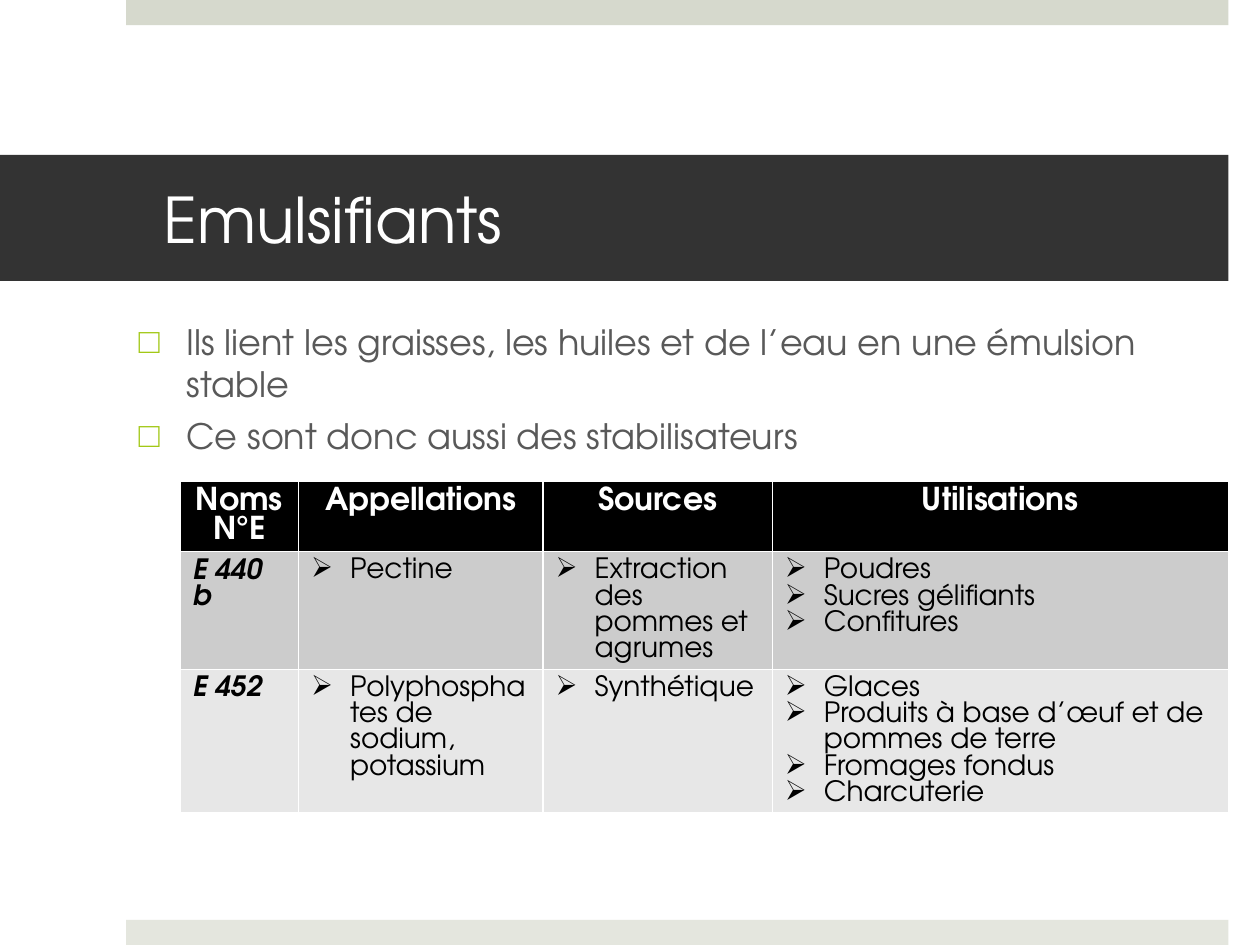
import pptx
import pptx.util
import pptx.dml.color
import pptx.enum.shapes
import pptx.enum.text
import pptx.oxml.ns
import lxml.etree

Inches = pptx.util.Inches
Pt = pptx.util.Pt
RGBColor = pptx.dml.color.RGBColor
PP_ALIGN = pptx.enum.text.PP_ALIGN
MSO_ANCHOR = pptx.enum.text.MSO_ANCHOR

FONT = "TeX Gyre Adventor"
WHITE = RGBColor(0xFF, 0xFF, 0xFF)
BLACK = RGBColor(0x00, 0x00, 0x00)
DARK = RGBColor(0x33, 0x33, 0x33)
GREY = RGBColor(0x59, 0x59, 0x59)
GREEN = RGBColor(0xA2, 0xC8, 0x16)
TOP_BAR = RGBColor(0xD6, 0xD9, 0xCD)
BOTTOM_BAR = RGBColor(0xE4, 0xE6, 0xDE)
ROW_FILLS = [BLACK, RGBColor(0xCC, 0xCC, 0xCC), RGBColor(0xE7, 0xE7, 0xE7)]


def style(p, size, color, spacing, bold=False, italic=False, align=PP_ALIGN.LEFT):
    p.alignment = align
    p.line_spacing = spacing
    p.space_before = Pt(0)
    for r in p.runs:
        r.font.name = FONT
        r.font.size = Pt(size)
        r.font.color.rgb = color
        r.font.bold = bold
        r.font.italic = italic


def add_bullet(p, char, indent, color):
    qn = pptx.oxml.ns.qn
    pPr = p._p.get_or_add_pPr()
    pPr.set("marL", str(Inches(indent)))
    pPr.set("indent", str(-Inches(indent)))
    clr = lxml.etree.SubElement(pPr, qn("a:buClr"))
    lxml.etree.SubElement(clr, qn("a:srgbClr")).set("val", str(color))
    lxml.etree.SubElement(pPr, qn("a:buChar")).set("char", char)


prs = pptx.Presentation()
prs.slide_width = Inches(10)
prs.slide_height = Inches(7.5)
s = prs.slides.add_slide(prs.slide_layouts[1])

for top, color in [(0, TOP_BAR), (7.3, BOTTOM_BAR)]:
    sp = s.shapes.add_shape(pptx.enum.shapes.MSO_SHAPE.RECTANGLE,
                            Inches(1), Inches(top), Inches(8.75), Inches(0.2))
    sp.shadow.inherit = False
    sp.fill.solid()
    sp.fill.fore_color.rgb = color
    sp.line.fill.background()

title = s.shapes.title
title.left, title.top = Inches(0), Inches(1.23)
title.width, title.height = Inches(9.75), Inches(1)
title.fill.solid()
title.fill.fore_color.rgb = DARK
tf = title.text_frame
tf.text = "Emulsifiants"
tf.word_wrap = True
tf.auto_size = pptx.enum.text.MSO_AUTO_SIZE.NONE
tf.vertical_anchor = MSO_ANCHOR.MIDDLE
tf.margin_left, tf.margin_right = Inches(1.3), Inches(0.3)
style(tf.paragraphs[0], 36, WHITE, 1.0)

body = s.placeholders[1]
body.left, body.top = Inches(1), Inches(2.49)
body.width, body.height = Inches(8.75), Inches(1.81)
tf = body.text_frame
tf.text = ("Ils lient les graisses, les huiles et de l’eau en une émulsion stable\n"
           "Ce sont donc aussi des stabilisateurs")
tf.word_wrap = True
tf.auto_size = pptx.enum.text.MSO_AUTO_SIZE.NONE
tf.vertical_anchor = MSO_ANCHOR.TOP
for p in tf.paragraphs:
    style(p, 20, GREY, Pt(24))
    p.space_before = Pt(6)
    add_bullet(p, "□", 0.38, GREEN)

rows = [
    ["Noms N°E", "Appellations", "Sources", "Utilisations"],
    ["E 440 b", "Pectine", "Extraction des pommes et agrumes",
     "Poudres\nSucres gélifiants\nConfitures"],
    ["E 452", "Polyphosphates de sodium, potassium", "Synthétique",
     "Glaces\nProduits à base d’œuf et de pommes de terre\n"
     "Fromages fondus\nCharcuterie"],
]
col_widths = [0.94, 1.94, 1.82, 3.62]
row_heights = [0.55, 0.93, 1.13]

table = s.shapes.add_table(len(rows), len(col_widths), Inches(1.43), Inches(3.82),
                           Inches(sum(col_widths)), Inches(sum(row_heights))).table
for col, width in zip(table.columns, col_widths):
    col.width = Inches(width)
for row, height in zip(table.rows, row_heights):
    row.height = Inches(height)

for i, texts in enumerate(rows):
    for j, text in enumerate(texts):
        cell = table.cell(i, j)
        cell.fill.solid()
        cell.fill.fore_color.rgb = ROW_FILLS[i]
        cell.text_frame.text = text
        for p in cell.text_frame.paragraphs:
            if i == 0:
                style(p, 18, WHITE, Pt(16.5), bold=True, align=PP_ALIGN.CENTER)
            elif j == 0:
                style(p, 16, BLACK, Pt(15), bold=True, italic=True)
            else:
                style(p, 16, BLACK, Pt(15))
                add_bullet(p, "➢", 0.31, BLACK)

prs.save("out.pptx")
